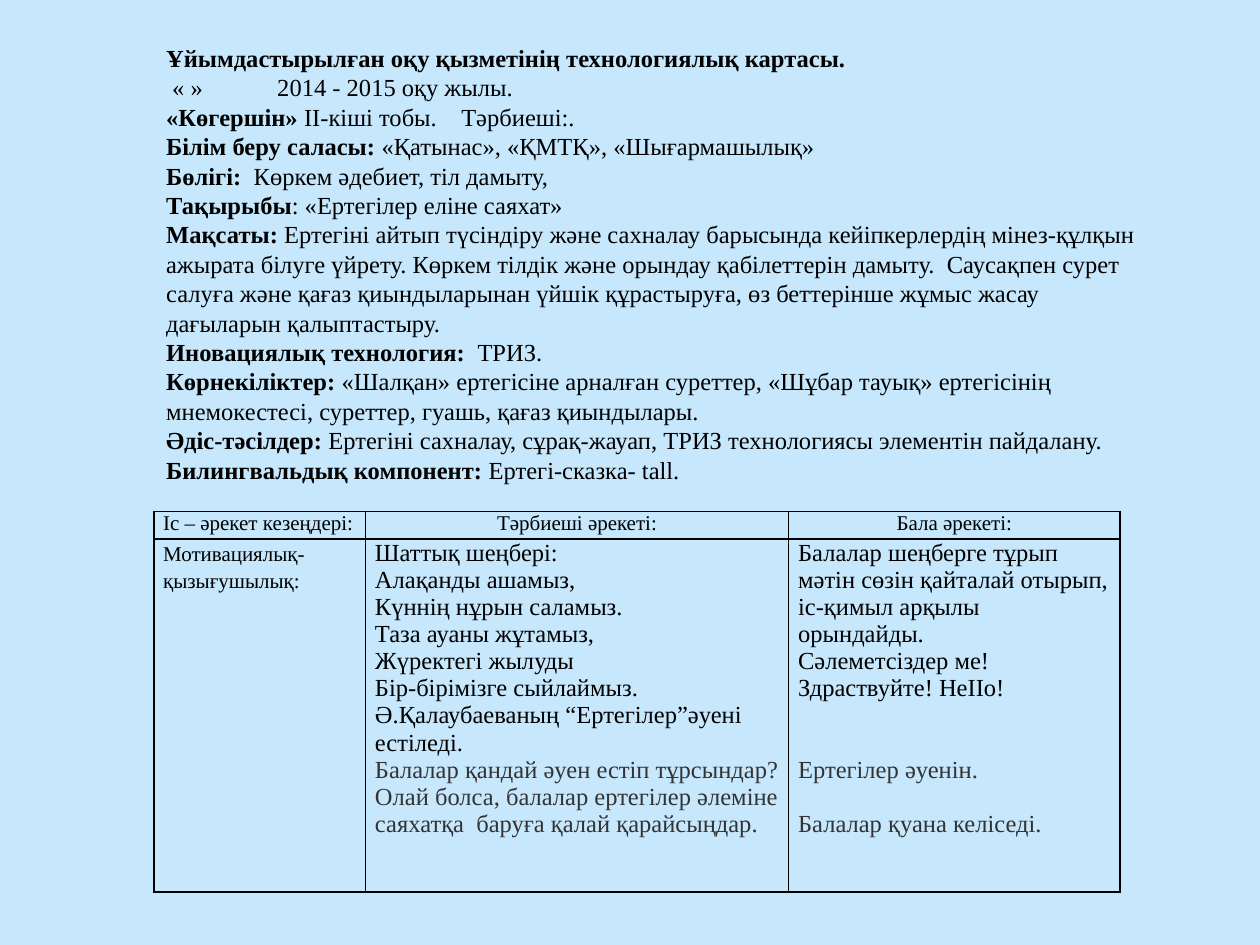
import pptx
import pptx.util
import pptx.dml.color
import pptx.enum.text
import pptx.oxml.ns
from lxml import etree

Cm, Pt = pptx.util.Cm, pptx.util.Pt
RGBColor = pptx.dml.color.RGBColor
qn = pptx.oxml.ns.qn
CENTER = pptx.enum.text.PP_ALIGN.CENTER

SKY = RGBColor(0xC6, 0xE7, 0xFC)
BLACK = RGBColor(0x00, 0x00, 0x00)
GREY = RGBColor(0x33, 0x33, 0x33)
FONT = "Times New Roman"

# Plan: bold label, plain text
PLAN = [
    ("Ұйымдастырылған оқу қызметінің технологиялық картасы.", ""),
    ("", " « »\t2014 - 2015 оқу жылы."),
    ("«Көгершін» ", "II-кіші тобы.\tТәрбиеші:."),
    ("Білім беру саласы: ", "«Қатынас», «ҚМТҚ», «Шығармашылық»"),
    ("Бөлігі:  ", "Көркем әдебиет, тіл дамыту,"),
    ("Тақырыбы", ": «Ертегілер еліне саяхат»"),
    ("Мақсаты: ", "Ертегіні айтып түсіндіру және сахналау барысында "
     "кейіпкерлердің мінез-құлқын ажырата білуге үйрету. Көркем тілдік және "
     "орындау қабілеттерін дамыту.  Саусақпен сурет салуға және қағаз "
     "қиындыларынан үйшік құрастыруға, өз беттерінше жұмыс жасау "
     "дағыларын қалыптастыру."),
    ("Иновациялық технология:  ", "ТРИЗ."),
    ("Көрнекіліктер: ", "«Шалқан» ертегісіне арналған суреттер, «Шұбар тауық» "
     "ертегісінің мнемокестесі, суреттер, гуашь, қағаз қиындылары."),
    ("Әдіс-тәсілдер: ", "Ертегіні сахналау, сұрақ-жауап, ТРИЗ технологиясы "
     "элементін пайдалану."),
    ("Билингвальдық компонент: ", "Ертегі-сказка- tall."),
]
TABS = {1: 2.24, 2: 5.95}  # plan line: tab stop in cm

# Table: head, stage, then (text, colour, empty lines above)
HEAD = ["Іс – әрекет кезеңдері:", "Тәрбиеші әрекеті:", "Бала әрекеті:"]
STAGE = "Мотивациялық-қызығушылық:"
TUTOR = [
    ("Шаттық шеңбері:", BLACK, 0),
    ("Алақанды ашамыз,", BLACK, 0),
    ("Күннің нұрын саламыз.", BLACK, 0),
    ("Таза ауаны жұтамыз,", BLACK, 0),
    ("Жүректегі жылуды", BLACK, 0),
    ("Бір-бірімізге сыйлаймыз.", BLACK, 0),
    ("Ә.Қалаубаеваның “Ертегілер”әуені естіледі.", BLACK, 0),
    ("Балалар қандай әуен естіп тұрсындар?", GREY, 0),
    ("Олай болса, балалар ертегілер әлеміне саяхатқа  баруға қалай "
     "қарайсыңдар.", GREY, 0),
]
CHILD = [
    ("Балалар шеңберге тұрып  мәтін сөзін қайталай отырып, іс-қимыл арқылы "
     "орындайды.", BLACK, 0),
    ("Сәлеметсіздер ме! Здраствуйте! HeIIo!", BLACK, 0),
    ("Ертегілер әуенін.", GREY, 2),
    ("Балалар қуана келіседі.", GREY, 1),
]
WIDTHS = [4.27, 8.53, 6.68]
HEIGHTS = [0.56, 7.11]
PITCH = 15.5  # table line height in points


def put(para, text, size, color=BLACK, bold=False):
    run = para.add_run()
    run.text = text
    look = {"name": FONT, "size": Pt(size), "bold": bold}
    for key, value in look.items():
        setattr(run.font, key, value)
    run.font.color.rgb = color


def lines(frame, items):
    """Yield a paragraph of the frame for each item."""
    for i, item in enumerate(items):
        yield frame.paragraphs[0] if i == 0 else frame.add_paragraph(), item


def frame_cell(cell):
    """Clear the fill, set margins and draw the four borders."""
    margins = {"margin_left": Cm(0.19), "margin_right": Cm(0.19),
               "margin_top": 0, "margin_bottom": 0}
    for key, value in margins.items():
        setattr(cell, key, value)
    props = cell._tc.get_or_add_tcPr()
    for side in ("a:lnL", "a:lnR", "a:lnT", "a:lnB"):
        edge = etree.SubElement(props, qn(side), w=str(Pt(1)))
        fill = etree.SubElement(edge, qn("a:solidFill"))
        etree.SubElement(fill, qn("a:srgbClr"), val=str(BLACK))
    cell.fill.background()


deck = pptx.Presentation()
deck.slide_width, deck.slide_height = Cm(25.4), Cm(19.05)
slide = deck.slides.add_slide(deck.slide_layouts[6])
slide.background.fill.solid()
slide.background.fill.fore_color.rgb = SKY

# Lesson plan
box = slide.shapes.add_textbox(Cm(3.1), Cm(0.74), Cm(20.4), Cm(9.25))
box.text_frame.word_wrap = True
for row, (para, pair) in enumerate(lines(box.text_frame, PLAN)):
    para.line_spacing = Pt(16.8)
    for text, bold in zip(pair, (True, False)):
        if text:
            put(para, text, 14, bold=bold)
    if row in TABS:
        stops = etree.SubElement(para._p.get_or_add_pPr(), qn("a:tabLst"))
        etree.SubElement(stops, qn("a:tab"), pos=str(Cm(TABS[row])), algn="l")

# Activity table
table = slide.shapes.add_table(
    2, 3, Cm(3.1), Cm(10.31), Cm(sum(WIDTHS)), Cm(sum(HEIGHTS))).table
table.first_row = table.horz_banding = False
for col, width in zip(table.columns, WIDTHS):
    col.width = Cm(width)
for row, height in zip(table.rows, HEIGHTS):
    row.height = Cm(height)
for cell in table.iter_cells():
    frame_cell(cell)

for i, text in enumerate(HEAD):
    para = table.cell(0, i).text_frame.paragraphs[0]
    put(para, text, 12)
    if i:
        para.alignment = CENTER

para = table.cell(1, 0).text_frame.paragraphs[0]
para.line_spacing = 1.15
put(para, STAGE, 12)

for i, items in enumerate((TUTOR, CHILD), 1):
    for para, (text, color, gap) in lines(table.cell(1, i).text_frame, items):
        para.line_spacing = Pt(PITCH)
        para.space_before = Pt(gap * PITCH)
        put(para, text, 14, color)

deck.save("out.pptx")
